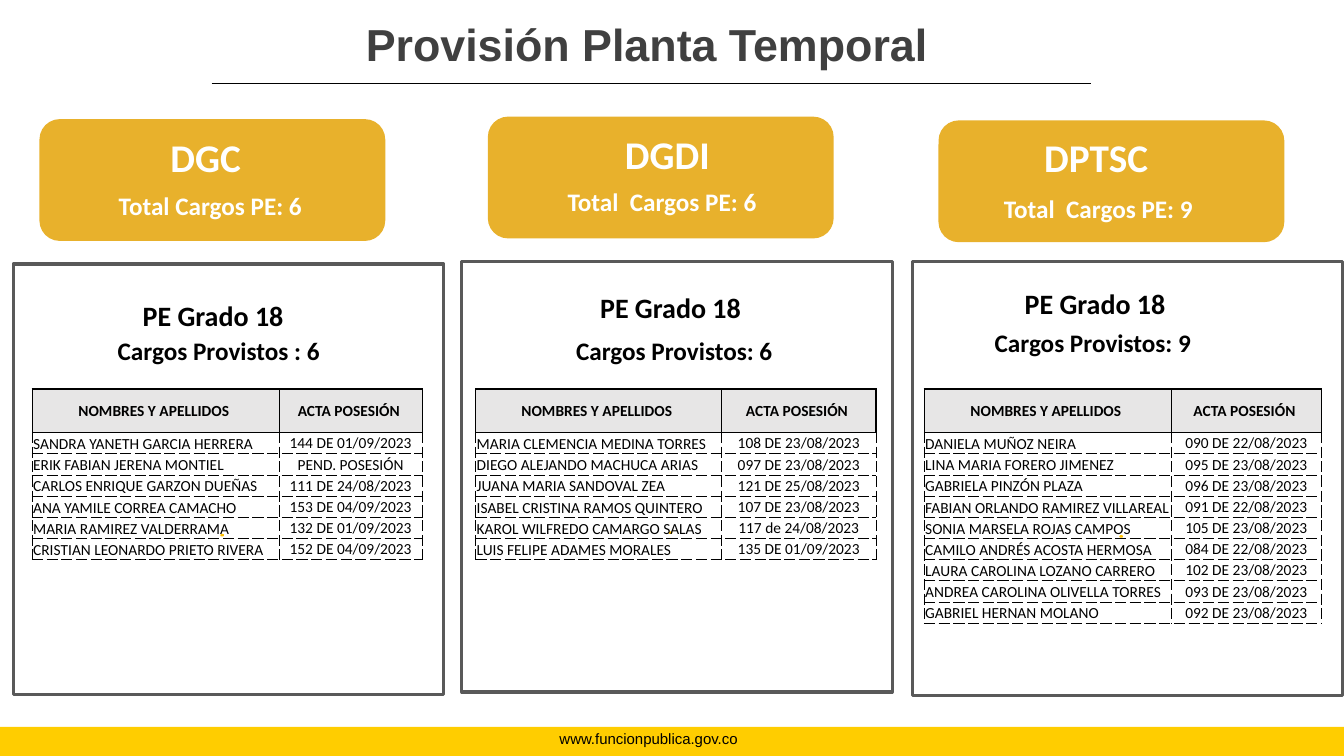
from pptx import Presentation
from pptx.util import Pt
from pptx.dml.color import RGBColor
from pptx.enum.shapes import MSO_SHAPE, MSO_CONNECTOR
from pptx.enum.text import PP_ALIGN, MSO_ANCHOR
from pptx.oxml.ns import qn
from lxml.etree import SubElement

TITLE = "Provisión Planta Temporal"
SITE = "www.funcionpublica.gov.co"
HEADS = ("NOMBRES Y APELLIDOS ", "ACTA POSESIÓN ")
GRADE = "PE Grado 18 "

GROUPS = [
    {
        "card": (28.2, 85.1), "panel": (188.6, 307.5),
        "name": ("DGC", 84.2, 85.7, 125.3),
        "total": ("Total Cargos PE: 6 ", 50.4, 128.2),
        "grade": (81.4, 203.8),
        "filled": ("Cargos Provistos : 6", 50.4, 231.8),
        "left": 23, "cols": (176.4, 102.2),
        "rows": [
            ("SANDRA YANETH GARCIA HERRERA", "144 DE 01/09/2023"),
            ("ERIK FABIAN JERENA MONTIEL", "PEND. POSESIÓN"),
            ("CARLOS ENRIQUE GARZON DUEÑAS", "111 DE 24/08/2023"),
            ("ANA YAMILE CORREA CAMACHO", "153 DE 04/09/2023"),
            ("MARIA RAMIREZ VALDERRAMA", "132 DE 01/09/2023"),
            ("CRISTIAN LEONARDO PRIETO RIVERA", "152 DE 04/09/2023"),
        ],
    },
    {
        "card": (348.5, 83.3), "panel": (186.8, 307.5),
        "name": ("DGDI", 414, 83.5, 125.3),
        "total": ("Total  Cargos PE: 6 ", 373, 125.3),
        "grade": (408.2, 198),
        "filled": ("Cargos Provistos: 6", 375.8, 231.8),
        "left": 339.8, "cols": (175.7, 110.2),
        "rows": [
            ("MARIA CLEMENCIA MEDINA TORRES", "108 DE 23/08/2023"),
            ("DIEGO ALEJANDO MACHUCA ARIAS", "097 DE 23/08/2023"),
            ("JUANA MARIA SANDOVAL ZEA", "121 DE 25/08/2023"),
            ("ISABEL CRISTINA RAMOS QUINTERO", "107 DE 23/08/2023"),
            ("KAROL WILFREDO CAMARGO SALAS", "117 de 24/08/2023"),
            ("LUIS FELIPE ADAMES MORALES", "135 DE 01/09/2023"),
        ],
    },
    {
        "card": (670.4, 86), "panel": (186.5, 310.3),
        "name": ("DPTSC", 714.2, 85.7, 137.5),
        "total": ("Total  Cargos PE: 9", 682.6, 130.6),
        "grade": (711.4, 195.1),
        "filled": ("Cargos Provistos: 9 ", 676.8, 226.3),
        "left": 660.2, "cols": (176.4, 107.3),
        "rows": [
            ("DANIELA MUÑOZ NEIRA", "090 DE 22/08/2023"),
            ("LINA MARIA FORERO JIMENEZ", "095 DE 23/08/2023"),
            ("GABRIELA PINZÓN PLAZA", "096 DE 23/08/2023"),
            ("FABIAN ORLANDO RAMIREZ VILLAREAL", "091 DE 22/08/2023"),
            ("SONIA MARSELA ROJAS CAMPOS", "105 DE 23/08/2023"),
            ("CAMILO ANDRÉS ACOSTA HERMOSA", "084 DE 22/08/2023"),
            ("LAURA CAROLINA LOZANO CARRERO", "102 DE 23/08/2023"),
            ("ANDREA CAROLINA OLIVELLA TORRES", "093 DE 23/08/2023"),
            ("GABRIEL HERNAN MOLANO", "092 DE 23/08/2023"),
        ],
    },
]

TOP, HEAD, ROW = 277.9, 31, 15.15

prs = Presentation()
prs.slide_width, prs.slide_height = Pt(960), Pt(540)
slide = prs.slides.add_slide(prs.slide_layouts[6])
shapes = slide.shapes


def tint(text):
    return RGBColor.from_string(text)


def write(frame, text, size=18, color="000000", bold=True, font="Calibri",
          align=PP_ALIGN.CENTER):
    para = frame.paragraphs[0]
    para.alignment = align
    run = para.add_run()
    run.text = text
    run.font.size, run.font.bold, run.font.name = Pt(size), bold, font
    run.font.color.rgb = tint(color)


def label(text, left, top, width, height, pad=9.4,
          anchor=MSO_ANCHOR.MIDDLE, **style):
    frame = shapes.add_textbox(Pt(left), Pt(top), Pt(width), Pt(height)).text_frame
    frame.word_wrap = True
    frame.vertical_anchor = anchor
    frame.margin_left = frame.margin_right = Pt(pad)
    frame.margin_top = frame.margin_bottom = Pt(pad)
    write(frame, text, **style)


def block(kind, left, top, width, height, fill=None, line=None):
    shape = shapes.add_shape(kind, Pt(left), Pt(top), Pt(width), Pt(height))
    shape.shadow.inherit = False
    if fill:
        shape.fill.solid()
        shape.fill.fore_color.rgb = tint(fill)
    else:
        shape.fill.background()
    if line:
        shape.line.color.rgb = tint(line)
        shape.line.width = Pt(2.25)
    else:
        shape.line.fill.background()
    return shape


def edge(cell, side, width, dash):
    line = SubElement(cell, qn("a:" + side), w=str(Pt(width)))
    fill = SubElement(line, qn("a:solidFill"))
    SubElement(fill, qn("a:srgbClr"), val="000000")
    SubElement(line, qn("a:prstDash"), val=dash)


def fill_cell(cell, text, row, col):
    head = row == 0
    cell.margin_left = cell.margin_right = cell.margin_top = Pt(0.7)
    cell.margin_bottom = Pt(0)
    name = col == 0 and not head
    cell.vertical_anchor = MSO_ANCHOR.BOTTOM if name else MSO_ANCHOR.MIDDLE
    write(cell.text_frame, text, size=11, bold=head,
          align=PP_ALIGN.LEFT if name else PP_ALIGN.CENTER)
    props = cell._tc.get_or_add_tcPr()
    for side in ("lnL", "lnR", "lnT", "lnB"):
        solid = head or (row == 1 and side == "lnT")
        edge(props, side, 1 if solid else 0.5, "solid" if solid else "dash")
    if head:
        cell.fill.solid()
        cell.fill.fore_color.rgb = tint("E7E6E6")
    else:
        cell.fill.background()


def roster(left, cols, rows):
    lines = [HEADS, *rows]
    high = HEAD + ROW * len(rows)
    table = shapes.add_table(len(lines), len(cols), Pt(left), Pt(TOP),
                             Pt(sum(cols)), Pt(high)).table
    table.first_row = table.horz_banding = False
    for col, width in enumerate(cols):
        table.columns[col].width = Pt(width)
    for row, line in enumerate(lines):
        table.rows[row].height = Pt(ROW if row else HEAD)
        for col, text in enumerate(line):
            fill_cell(table.cell(row, col), text, row, col)


def group(data):
    left, top = data["card"]
    base, high = data["panel"]
    block(MSO_SHAPE.ROUNDED_RECTANGLE, left, top, 247, 87, fill="E8B12C")
    block(MSO_SHAPE.RECTANGLE, left - 18.7, base, 307.5, high, line="595959")
    dot = block(MSO_SHAPE.ROUNDED_RECTANGLE, left + 129.2, top + 296.3, 2.6, 1.8,
                fill="FFC000")
    dot.adjustments[0] = 0.5
    name, x, y, width = data["name"]
    label(name, x, y, width, 46, anchor=MSO_ANCHOR.TOP, size=28, color="FFFFFF")
    text, x, y = data["total"]
    label(text, x, y, 203.8, 36.7, color="FFFFFF")
    label(GRADE, *data["grade"], 146.2, 36.7, anchor=MSO_ANCHOR.TOP, size=20)
    text, x, y = data["filled"]
    label(text, x, y, 211.7, 36.7)
    roster(data["left"], data["cols"], data["rows"])


block(MSO_SHAPE.RECTANGLE, 0, 519.1, 960, 20.9, fill="FFCD00")
label(SITE, 348.5, 517.7, 229.7, 20.2, pad=3.6, size=10.7, bold=False, font="Arial")
rule = shapes.add_connector(MSO_CONNECTOR.STRAIGHT, Pt(151.2), Pt(59.6), Pt(779), Pt(59.6))
rule.line.color.rgb = tint("000000")
rule.line.width = Pt(1)
SubElement(rule._element.spPr, qn("a:effectLst"))
label(TITLE, 116.6, 7.9, 691.2, 46, pad=3.6, size=32, color="404040", font="Arial")
for data in GROUPS:
    group(data)

prs.save("out.pptx")
